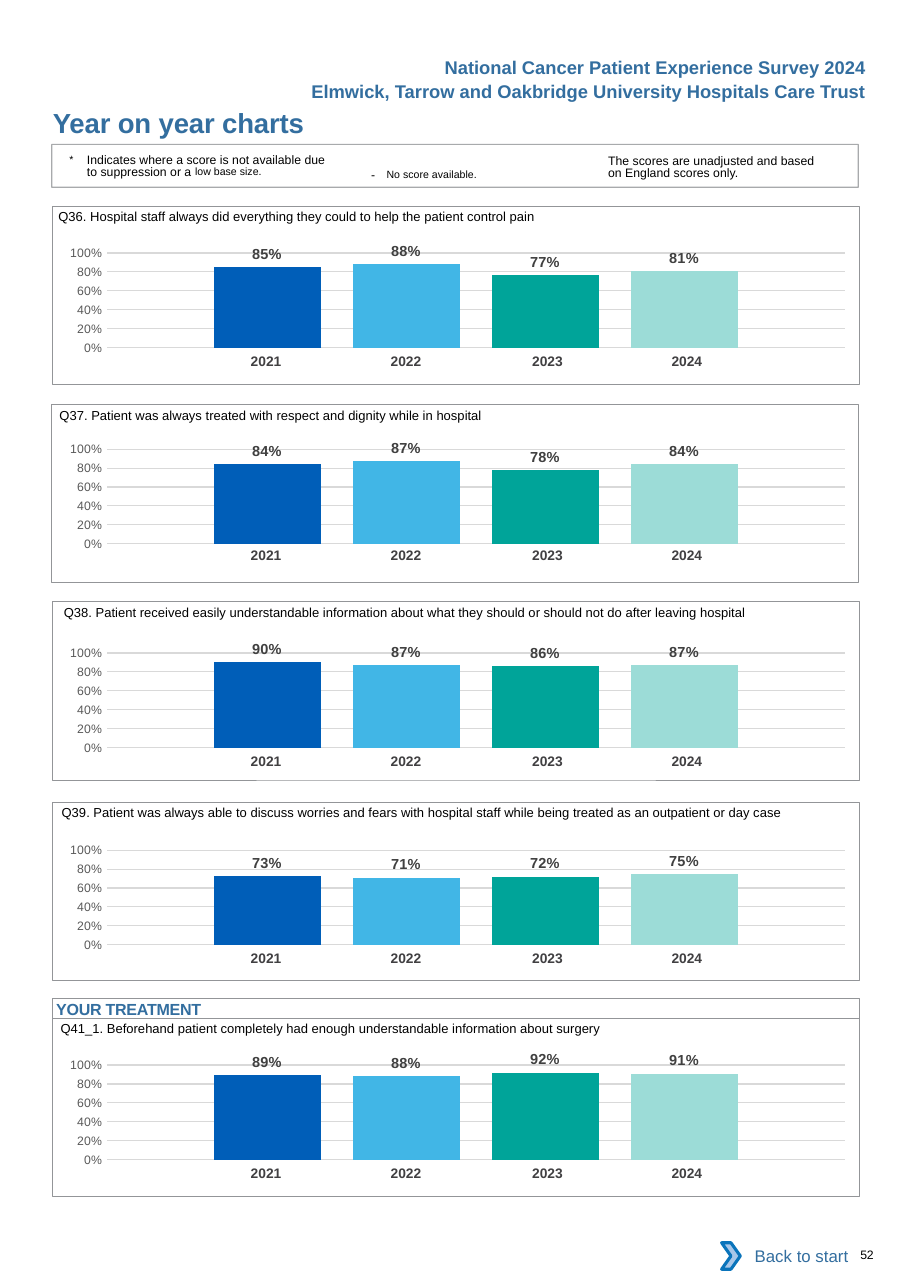
from dataclasses import dataclass

from lxml import etree
from pptx import Presentation
from pptx.chart.data import CategoryChartData
from pptx.dml.color import RGBColor
from pptx.enum.chart import XL_CHART_TYPE, XL_LABEL_POSITION, XL_TICK_MARK
from pptx.enum.shapes import MSO_SHAPE
from pptx.enum.text import MSO_ANCHOR, PP_ALIGN
from pptx.oxml import parse_xml
from pptx.oxml.ns import nsdecls, qn
from pptx.util import Inches, Pt

COLUMN_CHART = XL_CHART_TYPE.COLUMN_CLUSTERED
ABOVE_BAR = XL_LABEL_POSITION.OUTSIDE_END
NO_TICK = XL_TICK_MARK.NONE
RECTANGLE, CHEVRON = MSO_SHAPE.RECTANGLE, MSO_SHAPE.CHEVRON
TOP, MIDDLE = MSO_ANCHOR.TOP, MSO_ANCHOR.MIDDLE
LEFT, CENTER, RIGHT = PP_ALIGN.LEFT, PP_ALIGN.CENTER, PP_ALIGN.RIGHT

# The grid has ten columns and ten rows to the inch
CELL = Inches(0.1)
PAGE_COLUMNS, PAGE_ROWS = 82.6, 116.9
PANEL_WIDTH, PANEL_HEIGHT = 73.2, 16.2
BLUE, BLACK, GREY = "336E9F", "000000", "939598"
BAR_COLOURS = ("005EB8", "41B6E6", "00A499", "9CDCD7")
YEARS = ("2021", "2022", "2023", "2024")
YEAR_WIDTHS = (12.7, 12.7, 13.4, 12.7)
YEAR_RIGHT_MARGINS = (0, 0, 0.4, 1.2)
PLOT_AREA = {"x": 0.079, "y": 0.145, "w": 0.915, "h": 0.666}
PLAIN_TABLE = "{2D5ABB26-0587-4C30-8999-92F81FD0307C}"
DEFAULT_MARGINS = (1, 0.5, 1, 0.5)


@dataclass
class Area:
    left: float
    top: float
    width: float
    height: float

    def lengths(self) -> list[int]:
        return [grid(n) for n in (self.left, self.top, self.width, self.height)]


@dataclass
class Question:
    text: str
    scores: tuple[float, ...]
    text_left: float
    text_top: float
    panel_left: float
    panel_top: float
    chart_top: float
    years_top: float


QUESTIONS = (
    Question("Q36. Hospital staff always did everything they could to help the patient control pain",
             (0.85, 0.88, 0.77, 0.81), 5.3, 18, 4.8, 18.7, 21.1, 31.6),
    Question("Q37. Patient was always treated with respect and dignity while in hospital",
             (0.84, 0.87, 0.78, 0.84), 5.4, 36.1, 4.7, 36.7, 38.9, 49.2),
    Question("Q38. Patient received easily understandable information about what they should "
             "or should not do after leaving hospital",
             (0.90, 0.87, 0.86, 0.87), 5.8, 54, 4.8, 54.6, 57.4, 67.9),
    Question("Q39. Patient was always able to discuss worries and fears with hospital staff "
             "while being treated as an outpatient or day case",
             (0.73, 0.71, 0.72, 0.75), 5.6, 72.1, 4.8, 72.8, 75.3, 85.8),
    Question("Q41_1. Beforehand patient completely had enough understandable information about surgery",
             (0.89, 0.88, 0.92, 0.91), 5.5, 91.7, 4.8, 92.4, 94.8, 105.3),
)


def grid(cells: float) -> int:
    return round(cells * CELL)


def colour(code: str) -> RGBColor:
    return RGBColor.from_string(code)


def style(font, size: float, code: str, bold: bool = False, name: str = "Arial") -> None:
    font.size, font.bold, font.name = Pt(size), bold, name
    font.color.rgb = colour(code)


def add_span(para, text: str, size: float, code: str = BLACK, bold: bool = False,
             spacing: float = 0, raised: int = 0) -> None:
    span = para.add_run()
    span.text = text
    style(span.font, size, code, bold)
    properties = span.font._element
    if spacing:
        properties.set("spc", str(round(spacing * 100)))
    if raised:
        properties.set("baseline", str(raised * 1000))


def write(frame, text: str = "", size: float = 8, code: str = BLACK, bold: bool = False,
          spacing: float = 0, align=LEFT, anchor=TOP, margins=(0, 0, 0, 0), line_height=None):
    """Fill a text frame and return its paragraph for further spans."""
    frame.word_wrap = True
    frame.vertical_anchor = anchor
    (frame.margin_left, frame.margin_top,
     frame.margin_right, frame.margin_bottom) = map(grid, margins)
    para = frame.paragraphs[0]
    para.alignment = align
    if line_height:
        para.line_spacing = Pt(line_height)
    if text:
        add_span(para, text, size, code, bold, spacing)
    return para


def add_text(page, area: Area, text: str = "", **text_format):
    return write(page.shapes.add_textbox(*area.lengths()).text_frame, text, **text_format)


def add_box(page, area: Area, kind=RECTANGLE, fill: str = "", line: str = "", weight: float = 0.5):
    box = page.shapes.add_shape(kind, *area.lengths())
    box.shadow.inherit = False
    if fill:
        box.fill.solid()
        box.fill.fore_color.rgb = colour(fill)
    else:
        box.fill.background()
    if line:
        box.line.color.rgb = colour(line)
        box.line.width = Pt(weight)
    else:
        box.line.fill.background()
    return box


def add_score_chart(page, area: Area, scores: tuple[float, ...]) -> None:
    data = CategoryChartData(number_format="0%")
    data.categories = ["1"]
    for number, score in enumerate(scores, 1):
        data.add_series(f"Series {number}", [score])
    chart = page.shapes.add_chart(COLUMN_CHART, *area.lengths(), data).chart
    chart.has_legend = chart.has_title = False
    style(chart.font, 10, BLACK, name="Calibri")

    # Axes
    chart.category_axis.visible = False
    axis = chart.value_axis
    axis.minimum_scale, axis.maximum_scale, axis.major_unit = 0, 1, 0.2
    axis.major_tick_mark = axis.minor_tick_mark = NO_TICK
    axis.format.line.fill.background()
    axis.major_gridlines.format.line.color.rgb = colour("D9D9D9")
    axis.major_gridlines.format.line.width = Pt(0.75)
    axis.tick_labels.number_format = "0%"
    axis.tick_labels.number_format_is_linked = False
    style(axis.tick_labels.font, 8, "595959")

    # Bars and their labels
    plot = chart.plots[0]
    plot.gap_width, plot.overlap, plot.vary_by_categories = 200, -30, False
    for series, code in zip(plot.series, BAR_COLOURS):
        series.format.fill.solid()
        series.format.fill.fore_color.rgb = colour(code)
        labels = series.data_labels
        labels.show_value, labels.position = True, ABOVE_BAR
        labels.number_format, labels.number_format_is_linked = "0%", False
        style(labels.font, 9.5, "404040", bold=True)

    # Fixed plot area
    plot_area = chart._chartSpace.find(".//" + qn("c:plotArea"))
    for layout in plot_area.findall(qn("c:layout")):
        plot_area.remove(layout)
    modes = '<c:layoutTarget val="inner"/><c:xMode val="edge"/><c:yMode val="edge"/>'
    sizes = "".join(f'<c:{side} val="{share}"/>' for side, share in PLOT_AREA.items())
    plot_area.insert(0, parse_xml(
        f'<c:layout {nsdecls("c")}><c:manualLayout>{modes}{sizes}</c:manualLayout></c:layout>'))


def add_years(page, top: float) -> None:
    area = Area(17.3, top, sum(YEAR_WIDTHS), 2.7)
    table = page.shapes.add_table(1, len(YEARS), *area.lengths()).table
    table.first_row = table.horz_banding = False
    table._tbl.tblPr.find(qn("a:tableStyleId")).text = PLAIN_TABLE
    for index, (year, width, right) in enumerate(zip(YEARS, YEAR_WIDTHS, YEAR_RIGHT_MARGINS)):
        table.columns[index].width = grid(width)
        cell = table.cell(0, index)
        cell.fill.background()
        para = cell.text_frame.paragraphs[0]
        para.alignment = CENTER
        add_span(para, year, 9, "414042", True)
        cell.margin_left, cell.margin_right = grid(1), grid(right)
        cell.margin_top = cell.margin_bottom = grid(0.5)


def add_question(page, question: Question) -> None:
    add_text(page, Area(question.text_left, question.text_top, 72.4, 2.4), question.text,
             size=8.5, margins=(0, 0.9, 0, 0))
    add_score_chart(page, Area(3.9, question.chart_top, 73.2, 12.9), question.scores)
    add_years(page, question.years_top)
    add_box(page, Area(question.panel_left, question.panel_top, PANEL_WIDTH, PANEL_HEIGHT), line=GREY)


def add_header(page) -> None:
    heading = {"size": 12, "code": BLUE, "bold": True, "align": RIGHT, "margins": DEFAULT_MARGINS}
    add_text(page, Area(39.2, 4.6, 40.4, 3), "National Cancer Patient Experience Survey 2024", **heading)
    add_text(page, Area(25.6, 6.8, 54, 3),
             "Elmwick, Tarrow and Oakbridge University Hospitals Care Trust", **heading)
    add_text(page, Area(4.8, 9.6, 45, 3), "Year on year charts",
             size=18, code=BLUE, bold=True, spacing=-0.1)


def add_notes_box(page) -> None:
    note = {"margins": (0, 0.3, 0, 0), "line_height": 8.1}
    add_text(page, Area(55.2, 13.8, 20.1, 2.7),
             "The scores are unadjusted and based on England scores only.", **note)

    para = add_text(page, Area(32.7, 14.1, 18.3, 2.4), "- ", spacing=2.6, margins=DEFAULT_MARGINS)
    add_span(para, "No score available.", 12, raised=3)

    para = add_text(page, Area(6.3, 13.8, 24, 2.7), **note)
    para._p.get_or_add_pPr().set("marL", str(grid(1.6)))
    para._p.get_or_add_pPr().set("indent", str(-grid(1.6)))
    add_span(para, "*\t", 12, raised=3)
    add_span(para, "Indicates where a score is not available due to suppression or a ", 8)
    add_span(para, "low base size.", 12, raised=7)

    frame = add_box(page, Area(4.7, 13.1, PANEL_WIDTH, 3.9), line=GREY, weight=0.75)
    line_colour = frame._element.spPr.find(".//" + qn("a:srgbClr"))
    etree.SubElement(line_colour, qn("a:alpha")).set("val", "80000")


def add_footer(page) -> None:
    button = add_box(page, Area(66.2, 111.9, 11.8, 4.2), fill="FFFFFF")
    write(button.text_frame, "Back to start", size=11, code=BLUE,
          align=RIGHT, anchor=MIDDLE, margins=DEFAULT_MARGINS)
    add_box(page, Area(65.5, 112.8, 1.7, 2.4), CHEVRON, fill="A8C7E9", line="0A74BB", weight=2)
    add_text(page, Area(78.1, 113.2, 4.1, 1.3), "52", spacing=-0.2)


def main() -> None:
    deck = Presentation()
    deck.slide_width, deck.slide_height = grid(PAGE_COLUMNS), grid(PAGE_ROWS)
    page = deck.slides.add_slide(deck.slide_layouts[6])
    add_header(page)
    add_notes_box(page)
    for question in QUESTIONS:
        add_question(page, question)

    # Section heading above the last question
    section = add_box(page, Area(4.8, 90.6, PANEL_WIDTH, 1.8), line=GREY)
    write(section.text_frame, "YOUR TREATMENT", size=10.5, code=BLUE, bold=True,
          spacing=-0.15, margins=(0.3, 0.1, 0, 0))
    add_footer(page)
    deck.save("out.pptx")


if __name__ == "__main__":
    main()
